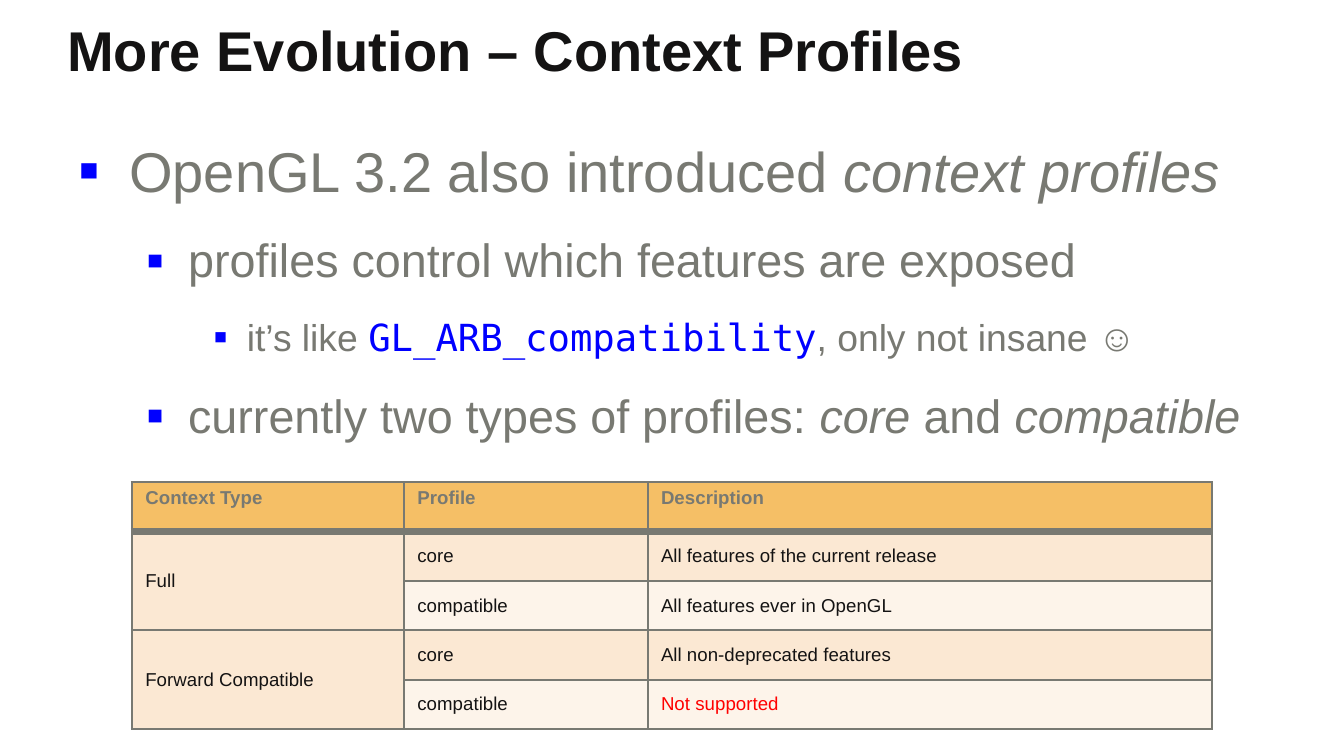
from dataclasses import dataclass

import lxml.etree
import pptx
import pptx.dml.color
import pptx.enum.text
import pptx.oxml.ns
import pptx.util

RGBColor = pptx.dml.color.RGBColor
BLACK = RGBColor(0x14, 0x13, 0x13)
GRAY = RGBColor(0x78, 0x79, 0x72)
BLUE = RGBColor(0x00, 0x00, 0xFF)
RED = RGBColor(0xFF, 0x00, 0x00)
GOLD = RGBColor(0xF5, 0xBF, 0x66)
PEACH = RGBColor(0xFB, 0xE8, 0xD3)
CREAM = RGBColor(0xFD, 0xF4, 0xEA)

SANS = "Arial"
MONO = "DejaVu Sans Mono"
SLIDE_WIDTH = pptx.util.Inches(8)
SLIDE_HEIGHT = pptx.util.Inches(4.5)
GRID_COLUMNS = 160
GRID_ROWS = 90


@dataclass(frozen=True)
class Area:
    column: float
    row: float
    columns: float
    rows: float


@dataclass(frozen=True)
class Span:
    text: str
    italic: bool = False
    code: bool = False


@dataclass(frozen=True)
class Level:
    size: int
    margin: float
    hanging: float


@dataclass(frozen=True)
class Bullet:
    level: int
    spans: tuple[Span, ...]


@dataclass(frozen=True)
class Profile:
    name: str
    description: str
    fill: RGBColor
    color: RGBColor = BLACK


@dataclass(frozen=True)
class Context:
    name: str
    profiles: tuple[Profile, ...]


TITLE_AREA = Area(6.4, 0, 147, 12.6)
BODY_AREA = Area(7.8, 13.6, 148.8, 68.4)
TABLE_AREA = Area(15.7, 57.4, 128.6, 29.4)
TABLE_COLUMNS = (32.4, 29, 67.2)
TABLE_HEADINGS = ("Context Type", "Profile", "Description")

LEVELS = (Level(24, 6, 6), Level(20, 13, 5), Level(16, 20, 4))
BULLETS = (
    Bullet(0, (Span("OpenGL 3.2 also introduced "), Span("context profiles", italic=True))),
    Bullet(1, (Span("profiles control which features are exposed"),)),
    Bullet(2, (
        Span("it’s like "),
        Span("GL_ARB_compatibility", code=True),
        Span(", only not insane ☺"),
    )),
    Bullet(1, (
        Span("currently two types of profiles: "),
        Span("core", italic=True),
        Span(" and "),
        Span("compatible", italic=True),
    )),
)
CONTEXTS = (
    Context("Full", (
        Profile("core", "All features of the current release", PEACH),
        Profile("compatible", "All features ever in OpenGL", CREAM),
    )),
    Context("Forward Compatible", (
        Profile("core", "All non-deprecated features", PEACH),
        Profile("compatible", "Not supported", CREAM, RED),
    )),
)


def across(columns: float) -> int:
    return round(SLIDE_WIDTH * columns / GRID_COLUMNS)


def down(rows: float) -> int:
    return round(SLIDE_HEIGHT * rows / GRID_ROWS)


def place(area: Area) -> tuple[int, int, int, int]:
    return across(area.column), down(area.row), across(area.columns), down(area.rows)


def set_font(font, size: int, color: RGBColor, bold: bool = False) -> None:
    font.name = SANS
    font.size = pptx.util.Pt(size)
    font.bold = bold
    font.color.rgb = color


def add_element(parent, tag: str, **attributes: str):
    return lxml.etree.SubElement(parent, pptx.oxml.ns.qn(tag), attributes)


def add_text_frame(slide, area: Area):
    frame = slide.shapes.add_textbox(*place(area)).text_frame
    frame.word_wrap = True
    frame.margin_left = frame.margin_right = across(1.6)
    frame.margin_top = frame.margin_bottom = down(1.8)
    return frame


def add_title(slide, text: str) -> None:
    paragraph = add_text_frame(slide, TITLE_AREA).paragraphs[0]
    paragraph.text = text
    set_font(paragraph.font, 24, BLACK, bold=True)


def write_bullet(paragraph, bullet: Bullet) -> None:
    level = LEVELS[bullet.level]
    paragraph.level = bullet.level
    properties = paragraph._p.get_or_add_pPr()
    properties.set("marL", str(across(level.margin)))
    properties.set("indent", str(-across(level.hanging)))
    color = add_element(properties, "a:buClr")
    add_element(color, "a:srgbClr", val=str(BLUE))
    add_element(properties, "a:buSzPct", val="110000")
    add_element(properties, "a:buFont", typeface=SANS)
    add_element(properties, "a:buChar", char="▪")
    paragraph.line_spacing = 1.1
    paragraph.space_after = pptx.util.Pt(4.8)
    set_font(paragraph.font, level.size, GRAY)
    for span in bullet.spans:
        run = paragraph.add_run()
        run.text = span.text
        if span.italic:
            run.font.italic = True
        if span.code:
            run.font.name = MONO
            run.font.color.rgb = BLUE


def add_body(slide) -> None:
    frame = add_text_frame(slide, BODY_AREA)
    for index, bullet in enumerate(BULLETS):
        paragraph = frame.add_paragraph() if index else frame.paragraphs[0]
        write_bullet(paragraph, bullet)
        if index:
            paragraph.space_before = pptx.util.Pt(4.8)


def style_cell(cell, row: int, fill: RGBColor) -> None:
    widths = {"L": 1, "R": 1, "T": 3 if row == 1 else 1, "B": 3 if row == 0 else 1}
    properties = cell._tc.get_or_add_tcPr()
    for side, width in widths.items():
        line = add_element(properties, f"a:ln{side}", w=str(pptx.util.Pt(width)))
        solid = add_element(line, "a:solidFill")
        add_element(solid, "a:srgbClr", val=str(GRAY))
    cell.fill.solid()
    cell.fill.fore_color.rgb = fill
    cell.margin_left = cell.margin_right = across(1.6)
    cell.margin_top = cell.margin_bottom = down(0.6)
    anchors = pptx.enum.text.MSO_ANCHOR
    cell.vertical_anchor = anchors.MIDDLE if row else anchors.TOP


def write_cell(cell, text: str, color: RGBColor, bold: bool = False) -> None:
    paragraph = cell.text_frame.paragraphs[0]
    paragraph.text = text
    set_font(paragraph.font, 8, color, bold)


def add_profile_table(slide) -> None:
    row_count = 1 + sum(len(context.profiles) for context in CONTEXTS)
    table = slide.shapes.add_table(row_count, len(TABLE_COLUMNS), *place(TABLE_AREA)).table
    for column, width in zip(table.columns, TABLE_COLUMNS):
        column.width = across(width)
    for column, heading in enumerate(TABLE_HEADINGS):
        style_cell(table.cell(0, column), 0, GOLD)
        write_cell(table.cell(0, column), heading, GRAY, bold=True)
    row = 1
    for context in CONTEXTS:
        first_row = row
        for profile in context.profiles:
            for column, fill in enumerate((PEACH, profile.fill, profile.fill)):
                style_cell(table.cell(row, column), row, fill)
            write_cell(table.cell(row, 1), profile.name, BLACK)
            write_cell(table.cell(row, 2), profile.description, profile.color)
            row += 1
        write_cell(table.cell(first_row, 0), context.name, BLACK)
        table.cell(first_row, 0).merge(table.cell(row - 1, 0))


def main() -> None:
    presentation = pptx.Presentation()
    presentation.slide_width = SLIDE_WIDTH
    presentation.slide_height = SLIDE_HEIGHT
    slide = presentation.slides.add_slide(presentation.slide_layouts[6])
    add_body(slide)
    add_title(slide, "More Evolution – Context Profiles")
    add_profile_table(slide)
    presentation.save("out.pptx")


if __name__ == "__main__":
    main()
